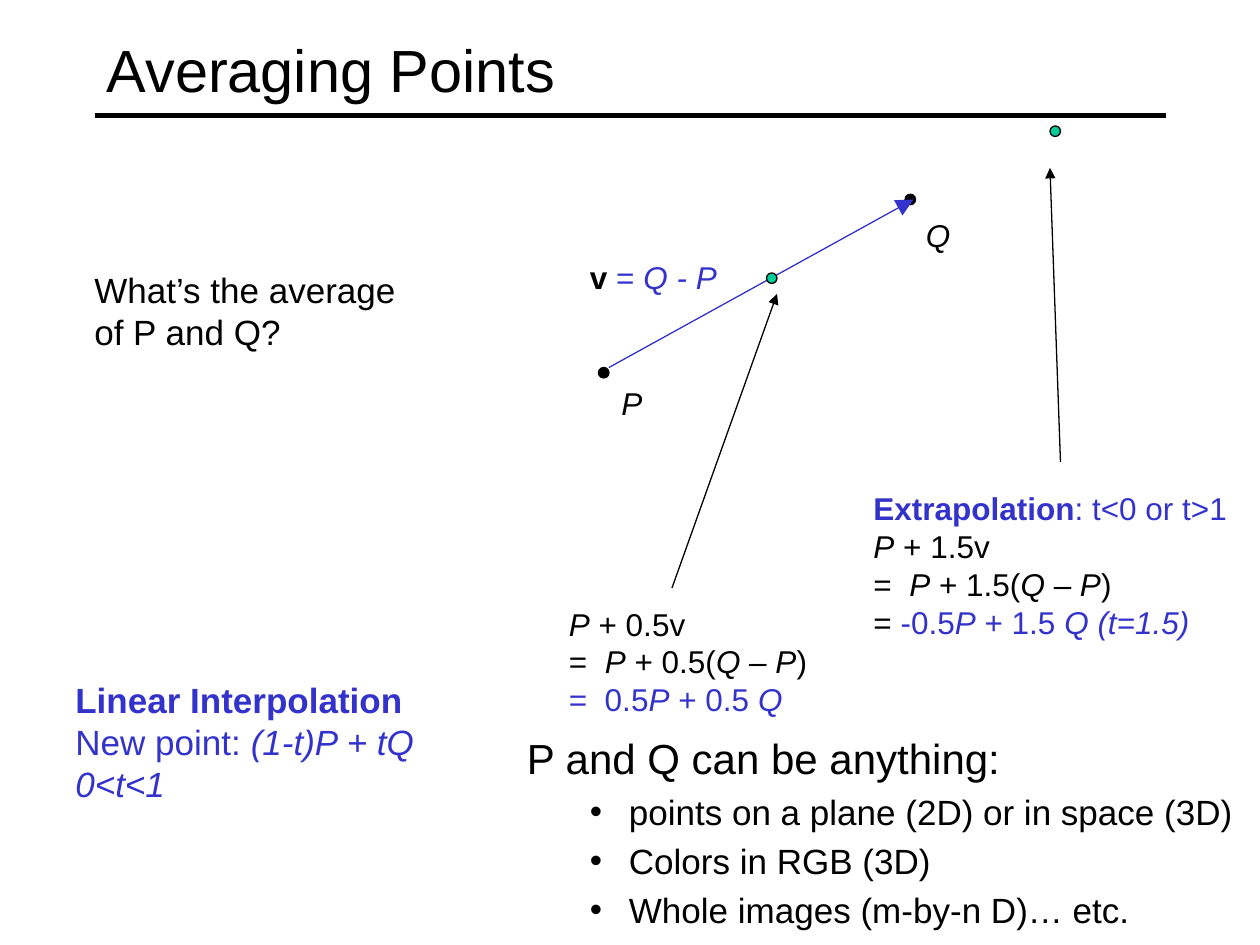
from lxml.etree import SubElement
from pptx import Presentation
from pptx.dml.color import RGBColor
from pptx.enum.shapes import MSO_CONNECTOR, MSO_SHAPE
from pptx.enum.text import MSO_ANCHOR, MSO_AUTO_SIZE
from pptx.oxml.ns import qn
from pptx.util import Inches, Pt

HUES = {"ink": "000000", "blue": "3333CC", "mint": "00CC99"}
FACE = "Arial"
CELL = 1 / 12


def grid(*cells):
    return [Inches(cell * CELL) for cell in cells]


def put(par, text, size=18, bold=False, ital=False, hue="ink"):
    run = par.add_run()
    run.text = text
    font = run.font
    font.name, font.size, font.bold, font.italic = FACE, Pt(size), bold, ital
    font.color.rgb = RGBColor.from_string(HUES[hue])


class Page:
    def __init__(self, deck):
        self.slide = deck.slides.add_slide(deck.slide_layouts[6])
        self.shapes = self.slide.shapes

    def paint(self, line, hue, width):
        line.color.rgb = RGBColor.from_string(HUES[hue])
        line.width = Pt(width)

    def dot(self, col, row, hue="ink"):
        dot = self.shapes.add_shape(MSO_SHAPE.OVAL, *grid(col, row, 1, 1))
        dot.shadow.inherit = False
        dot.fill.solid()
        dot.fill.fore_color.rgb = RGBColor.from_string(HUES[hue])
        self.paint(dot.line, "ink", 0.75)

    def line(self, start, end, hue="ink", width=0.75, tip=None):
        link = self.shapes.add_connector(MSO_CONNECTOR.STRAIGHT, *grid(*start, *end))
        self.paint(link.line, hue, width)
        props = link.element.spPr
        if tip:
            SubElement(props.find(qn("a:ln")), qn("a:tailEnd"), type="triangle", w=tip, len=tip)
        SubElement(props, qn("a:effectLst"))

    def text(self, area, rows, size=18, wrap=True, grow=True, anchor=MSO_ANCHOR.TOP):
        frame = self.shapes.add_textbox(*grid(*area)).text_frame
        frame.word_wrap = wrap
        frame.auto_size = MSO_AUTO_SIZE.SHAPE_TO_FIT_TEXT if grow else MSO_AUTO_SIZE.NONE
        frame.vertical_anchor = anchor
        for num, row in enumerate(rows):
            par = frame.add_paragraph() if num else frame.paragraphs[0]
            for words, marks in row:
                put(par, words, size, bold="b" in marks, ital="i" in marks,
                    hue="blue" if "u" in marks else "ink")
        return frame

    def list(self, area, head, items):
        frame = self.text(area, [], grow=False)
        for num, item in enumerate([head, *items]):
            par = frame.add_paragraph() if num else frame.paragraphs[0]
            size = 20 if num else 24
            par.space_before = Pt(size * 0.2)
            left, hang = (0.81, 0.31) if num else (0.38, 0.38)
            props = par._p.get_or_add_pPr()
            props.set("marL", str(Inches(left)))
            props.set("indent", str(-Inches(hang)))
            if num:
                par.level = 1
                SubElement(props, qn("a:buFont"), typeface=FACE)
                SubElement(props, qn("a:buChar"), char="•")
            put(par, item, size)


def blend(share):
    return [
        [("P", "i"), (f" + {share}v", "")],
        [("=  ", ""), ("P", "i"), (f" + {share}(", ""), ("Q – P", "i"), (")", "")],
    ]


def main():
    deck = Presentation()
    deck.slide_width, deck.slide_height = grid(120, 90)
    page = Page(deck)

    page.line((9, 11), (111, 11), width=3)
    page.text((9, 1, 102, 11), [[("Averaging Points", "")]], size=34,
              grow=False, anchor=MSO_ANCHOR.MIDDLE)

    page.dot(57, 35)
    page.text((58, 36, 4.4, 4.8), [[("P", "i")]], wrap=False)
    page.dot(86.2, 18.5)
    page.text((87, 20, 4.8, 4.8), [[("Q", "i")]], wrap=False)
    page.line((58, 35), (87, 19), hue="blue", tip="lg")
    page.text((55, 24, 14.5, 4.8),
              [[("v ", "b"), ("= ", "u"), ("Q - P", "ui")]], wrap=False)

    page.dot(73, 26, "mint")
    page.line((64, 56), (74, 28), tip="med")
    page.text((53, 57, 27, 12), blend(0.5) + [
        [("=  0.5", "u"), ("P", "ui"), (" + 0.5 ", "u"), ("Q", "ui")],
    ])

    page.dot(100, 12, "mint")
    page.line((101, 44), (100, 16), tip="med")
    page.text((82, 46, 38, 15.7), [
        [("Extrapolation", "ub"), (": t<0 or t>1", "u")],
        *blend(1.5),
        [("= ", ""), ("-0.5", "u"), ("P", "ui"), (" + 1.5 ", "u"), ("Q (t=1.5)", "ui")],
    ])

    page.text((6, 64, 42, 13.3), [
        [("Linear Interpolation", "ub")],
        [("New point: ", "u"), ("(1-t)P + tQ", "ui")],
        [("0<t<1", "ui")],
    ], size=20)
    page.list((49, 69.2, 71, 20.8), "P and Q can be anything:", [
        "points on a plane (2D) or in space (3D)",
        "Colors in RGB (3D)",
        "Whole images (m-by-n D)… etc.",
    ])
    page.text((7.8, 25, 33, 9.2), [
        [("What’s the average", "")],
        [("of P and Q?", "")],
    ], size=20)

    deck.save("out.pptx")


if __name__ == "__main__":
    main()
